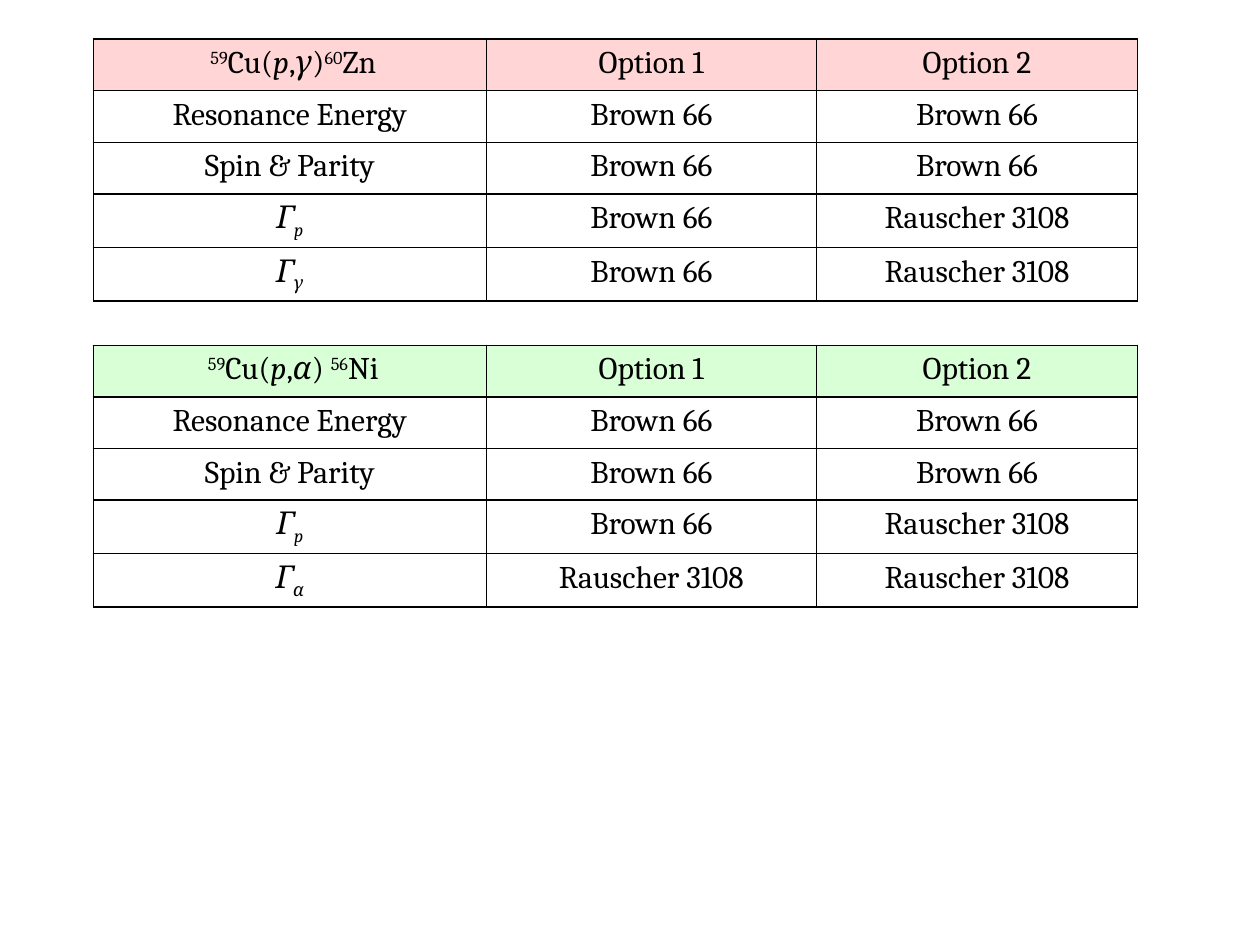
"""Build a slide with two tables of nuclear reaction inputs."""
from lxml import etree
from pptx import Presentation
from pptx import util as u
from pptx.dml import color
from pptx.enum import text
from pptx.oxml import ns

HUES = {"ink": "000000", "pink": "FFD5D5", "green": "D8FFD5"}
WIDTHS = (3.12, 2.62, 2.55)
ROW = 0.41


def write(cell, words, italic=False, base=0, size=18, font="Cambria"):
    para = cell.text_frame.paragraphs[0]
    para.alignment = text.PP_ALIGN.CENTER
    run = para.add_run()
    run.text = words
    run.font.name = font
    run.font.size = u.Pt(size)
    run.font.italic = italic
    run.font.color.rgb = color.RGBColor.from_string(HUES["ink"])
    if base:
        run._r.get_or_add_rPr().set("baseline", str(base * 1000))


def frame(cell):
    props = cell._tc.get_or_add_tcPr()
    for side in ("lnL", "lnR", "lnT", "lnB"):
        line = etree.SubElement(props, ns.qn(f"a:{side}"), w=str(u.Pt(1)))
        fill = etree.SubElement(line, ns.qn("a:solidFill"))
        etree.SubElement(fill, ns.qn("a:srgbClr"), val=HUES["ink"])


deck = Presentation()
deck.slide_width, deck.slide_height = u.Inches(10), u.Inches(7.5)
slide = deck.slides.add_slide(deck.slide_layouts[6])

brown, rausch = "Brown 66", "Rauscher 3108"
tables = (
    (0.31, "pink", "γ", ")", "60", "Zn", brown),
    (2.74, "green", "α", ") ", "56", "Ni", rausch),
)

for top, hue, exit, close, mass, atom, last in tables:
    head = ((" ", {}), ("59", {"base": 30}), ("Cu(", {}), ("p", {"italic": True}),
            (",", {}), (exit, {"italic": True}), (close, {}),
            (mass, {"base": 30}), (atom, {}))
    gammas = [(("Γ", {"italic": True}), (sub, {"italic": True, "base": -25}))
              for sub in ("p", exit)]
    rows = (
        (head, "Option 1", "Option 2"),
        ("Resonance Energy", brown, brown),
        ("Spin & Parity", brown, brown),
        (gammas[0], brown, rausch),
        (gammas[1], last, rausch),
    )
    grid = slide.shapes.add_table(
        len(rows), len(WIDTHS), u.Inches(0.74), u.Inches(top),
        u.Inches(sum(WIDTHS)), u.Inches(ROW * len(rows))).table
    grid.first_row = grid.horz_banding = False
    for col, width in zip(grid.columns, WIDTHS):
        col.width = u.Inches(width)
    for r, row in enumerate(rows):
        grid.rows[r].height = u.Inches(ROW)
        for c, parts in enumerate(row):
            cell = grid.cell(r, c)
            frame(cell)
            if r == 0:
                cell.fill.solid()
                cell.fill.fore_color.rgb = color.RGBColor.from_string(HUES[hue])
            else:
                cell.fill.background()
            if isinstance(parts, str):
                parts = ((parts, {}),)
            for words, style in parts:
                write(cell, words, **style)

deck.save("out.pptx")
